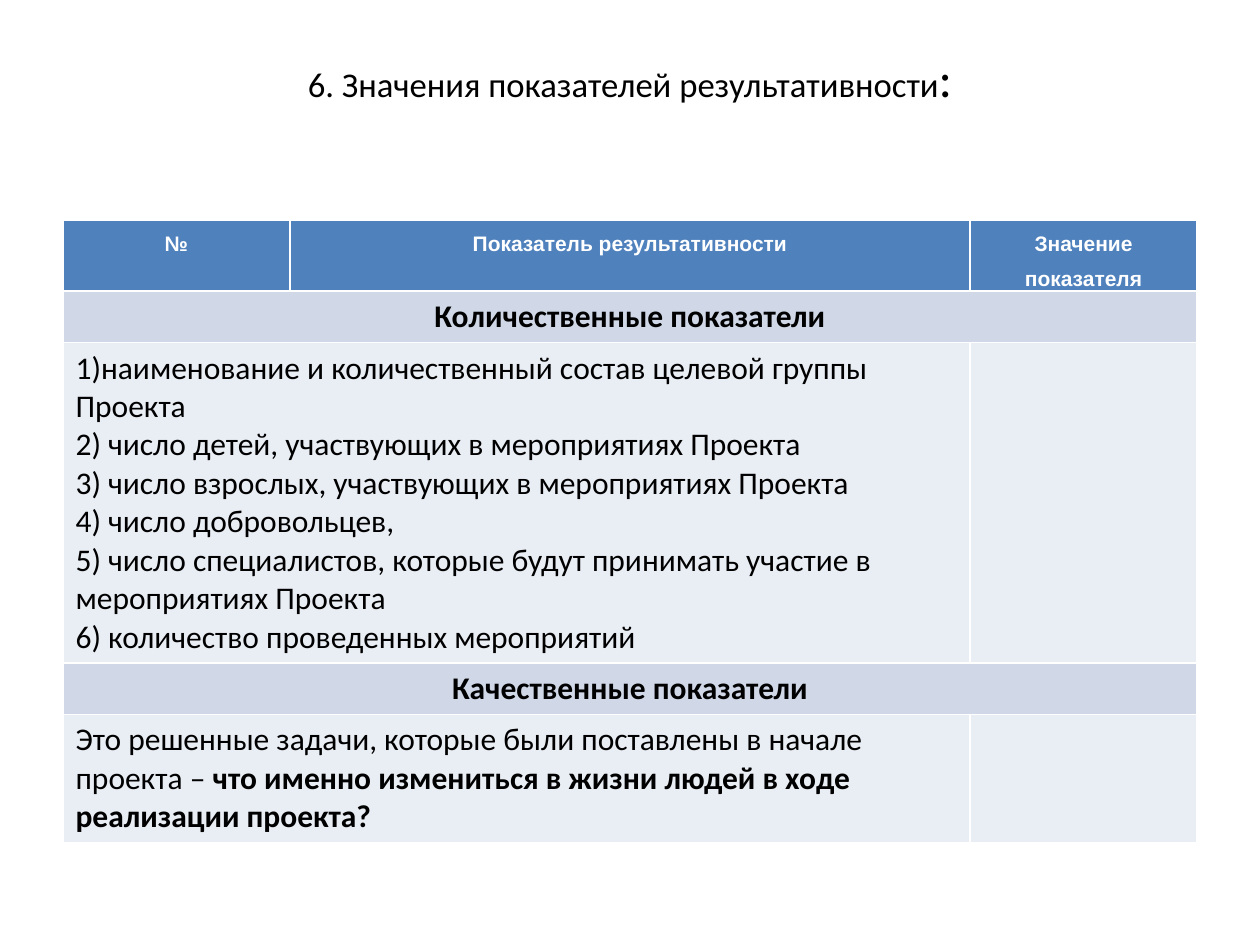
"""Build a slide with a table of project performance indicators."""
from pptx import Presentation
from pptx.dml.color import RGBColor
from pptx.enum.text import MSO_ANCHOR, MSO_AUTO_SIZE, PP_ALIGN
from pptx.util import Inches, Pt

COLORS = {
    "text": "000000",
    "header_text": "FFFFFF",
    "header": "4F81BD",
    "section": "D0D8E8",
    "detail": "E9EDF4",
}
HEADERS = ["№", "Показатель результативности", "Значение показателя"]
SECTIONS = {1: "Количественные показатели", 3: "Качественные показатели"}
DETAILS = {
    2: [
        [("1)наименование и количественный состав целевой группы Проекта", False)],
        [("2) число детей, участвующих в мероприятиях Проекта", False)],
        [("3) число взрослых, участвующих в мероприятиях Проекта", False)],
        [("4) число добровольцев,", False)],
        [("5) число специалистов, которые будут принимать участие в мероприятиях Проекта", False)],
        [("6) количество проведенных мероприятий", False)],
    ],
    4: [
        [
            ("Это решенные задачи, которые были поставлены в начале проекта – ", False),
            ("что именно измениться в жизни людей в ходе реализации проекта?", True),
        ],
    ],
}


def style_font(font, name, size, color):
    font.name = name
    font.size = Pt(size)
    font.color.rgb = RGBColor.from_string(COLORS[color])


def fill_cell(cell, color):
    cell.fill.solid()
    cell.fill.fore_color.rgb = RGBColor.from_string(COLORS[color])


deck = Presentation()
deck.slide_width, deck.slide_height = Inches(10), Inches(7.5)
page = deck.slides.add_slide(deck.slide_layouts[5])

title = page.shapes.title
title.left, title.top = Inches(0.5), Inches(0.3)
title.width, title.height = Inches(9), Inches(1.25)
frame = title.text_frame
frame.auto_size = MSO_AUTO_SIZE.NONE
frame.vertical_anchor = MSO_ANCHOR.TOP
frame.margin_top = Inches(0.07)
para = frame.paragraphs[0]
para.alignment = PP_ALIGN.CENTER
for text, size in [("6. Значения показателей результативности", 19.8), (":", 28.8)]:
    span = para.add_run()
    span.text = text
    style_font(span.font, "Calibri", size, "text")

table = page.shapes.add_table(5, 3, Inches(0.5), Inches(1.75), Inches(9), Inches(4.93)).table
for column, width in zip(table.columns, [1.8, 5.4, 1.8]):
    column.width = Inches(width)
for row, height in zip(table.rows, [0.55, 0.41, 2.54, 0.41, 1.02]):
    row.height = Inches(height)

for column, text in enumerate(HEADERS):
    cell = table.cell(0, column)
    fill_cell(cell, "header")
    cell.margin_left = cell.margin_right = Inches(0.07)
    cell.margin_top = cell.margin_bottom = 0
    cell.text = text
    para = cell.text_frame.paragraphs[0]
    para.alignment = PP_ALIGN.CENTER
    para.line_spacing = 1.5
    style_font(para.font, "Arial", 12, "header_text")
    para.font.bold = True

for row, text in SECTIONS.items():
    cell = table.cell(row, 0)
    cell.merge(table.cell(row, 2))
    fill_cell(cell, "section")
    cell.text = text
    para = cell.text_frame.paragraphs[0]
    para.alignment = PP_ALIGN.CENTER
    style_font(para.font, "Calibri", 18, "text")
    para.font.bold = True

for row, lines in DETAILS.items():
    cell = table.cell(row, 0)
    cell.merge(table.cell(row, 1))
    fill_cell(cell, "detail")
    fill_cell(table.cell(row, 2), "detail")
    frame = cell.text_frame
    for index, line in enumerate(lines):
        para = frame.add_paragraph() if index else frame.paragraphs[0]
        style_font(para.font, "Calibri", 18, "text")
        for text, bold in line:
            span = para.add_run()
            span.text = text
            span.font.bold = bold

deck.save("out.pptx")
